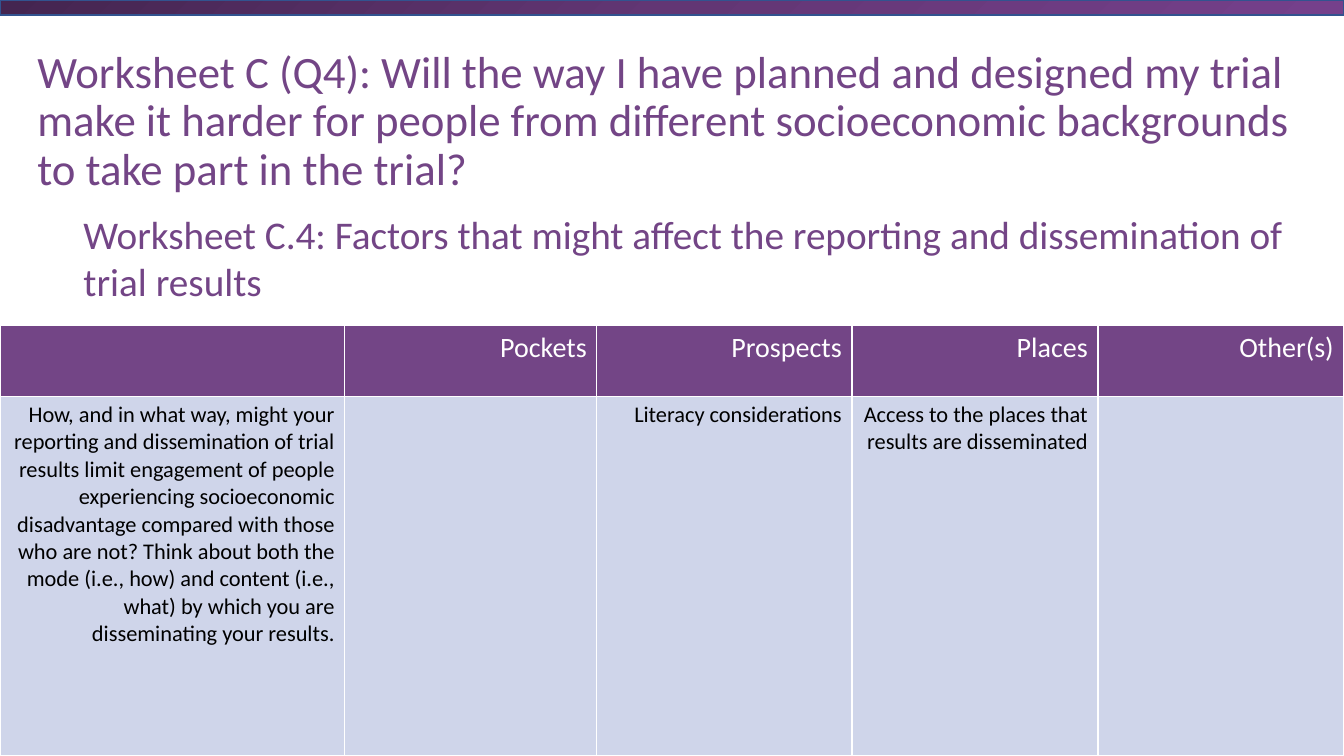
from copy import deepcopy

from lxml.etree import SubElement
from pptx import Presentation
from pptx.dml.color import RGBColor
from pptx.enum.shapes import MSO_SHAPE
from pptx.enum.text import MSO_ANCHOR, MSO_AUTO_SIZE, PP_ALIGN
from pptx.oxml.ns import qn
from pptx.util import Inches, Pt

COLORS = {
    "purple": "734586", "band_dark": "442550", "band_mid": "623674",
    "band_light": "75408B", "band_line": "32538F", "cell": "CFD5EA",
    "white": "FFFFFF", "black": "000000",
}


def style_text(frame, size, color, align=PP_ALIGN.LEFT):
    for para in frame.paragraphs:
        para.alignment = align
        for span in para.runs:
            span.font.name = "Calibri"
            span.font.size = Pt(size)
            span.font.bold = False
            span.font.color.rgb = RGBColor.from_string(COLORS[color])


def add_borders(cell, color):
    props = cell._tc.get_or_add_tcPr()
    for index, side in enumerate(("lnL", "lnR", "lnT", "lnB")):
        line = props.makeelement(qn(f"a:{side}"), {"w": str(Pt(1))})
        fill = SubElement(line, qn("a:solidFill"))
        SubElement(fill, qn("a:srgbClr"), val=COLORS[color])
        props.insert(index, line)


deck = Presentation()
deck.slide_width, deck.slide_height = Inches(13.33), Inches(7.5)
page = deck.slides.add_slide(deck.slide_layouts[5])

# Gradient band along the top edge
band = page.shapes.add_shape(MSO_SHAPE.RECTANGLE, 0, 0, Inches(13.33), Inches(0.15))
band.shadow.inherit = False
band.line.color.rgb = RGBColor.from_string(COLORS["band_line"])
band.line.width = Pt(1)
band.fill.gradient()
band.fill.gradient_angle = 315
first_stop = band._element.spPr.find(".//" + qn("a:gs"))
first_stop.addnext(deepcopy(first_stop))
band_stops = zip(band.fill.gradient_stops, (0, 0.5, 1), ("band_dark", "band_mid", "band_light"))
for stop, position, color in band_stops:
    stop.position = position
    stop.color.rgb = RGBColor.from_string(COLORS[color])

# Title
title = page.shapes.title
title.left, title.top = Inches(0.32), Inches(0.49)
title.width, title.height = Inches(12.68), Inches(1.45)
frame = title.text_frame
frame.text = ("Worksheet C (Q4): Will the way I have planned and designed my trial make it "
              "harder for people from different socioeconomic backgrounds to take part in the trial?")
frame.word_wrap = True
frame.auto_size = MSO_AUTO_SIZE.NONE
frame.vertical_anchor = MSO_ANCHOR.MIDDLE
frame.margin_left = frame.margin_right = Inches(0.05)
frame.margin_top = frame.margin_bottom = Inches(0.05)
frame.paragraphs[0].line_spacing = 0.9
style_text(frame, 32, "purple")

# Worksheet heading
heading = page.shapes.add_textbox(Inches(0.73), Inches(2.04), Inches(12.27), Inches(1.04))
heading.text_frame.word_wrap = True
heading.text_frame.text = ("Worksheet C.4: Factors that might affect the reporting and "
                           "dissemination of trial results")
style_text(heading.text_frame, 28, "purple")

# Worksheet table
rows = [
    ["", "Pockets", "Prospects", "Places", "Other(s)"],
    ["How, and in what way, might your reporting and dissemination of trial results limit "
     "engagement of people experiencing socioeconomic disadvantage compared with those who are "
     "not? Think about both the mode (i.e., how) and content (i.e., what) by which you are "
     "disseminating your results.",
     "", "Literacy considerations", "Access to the places that results are disseminated", ""],
]
row_styles = [(0.7, "purple", 20, "white"), (3.57, "cell", 16, "black")]
column_widths = [3.42, 2.5, 2.53, 2.44, 2.44]

table = page.shapes.add_table(len(rows), len(column_widths), 0, Inches(3.23),
                              Inches(13.33), Inches(4.27)).table
for column, width in zip(table.columns, column_widths):
    column.width = Inches(width)
for row, texts, (height, fill, size, color) in zip(table.rows, rows, row_styles):
    row.height = Inches(height)
    for cell, text in zip(row.cells, texts):
        cell.text_frame.text = text
        cell.fill.solid()
        cell.fill.fore_color.rgb = RGBColor.from_string(COLORS[fill])
        add_borders(cell, "white")
        style_text(cell.text_frame, size, color, PP_ALIGN.RIGHT)

deck.save("out.pptx")
